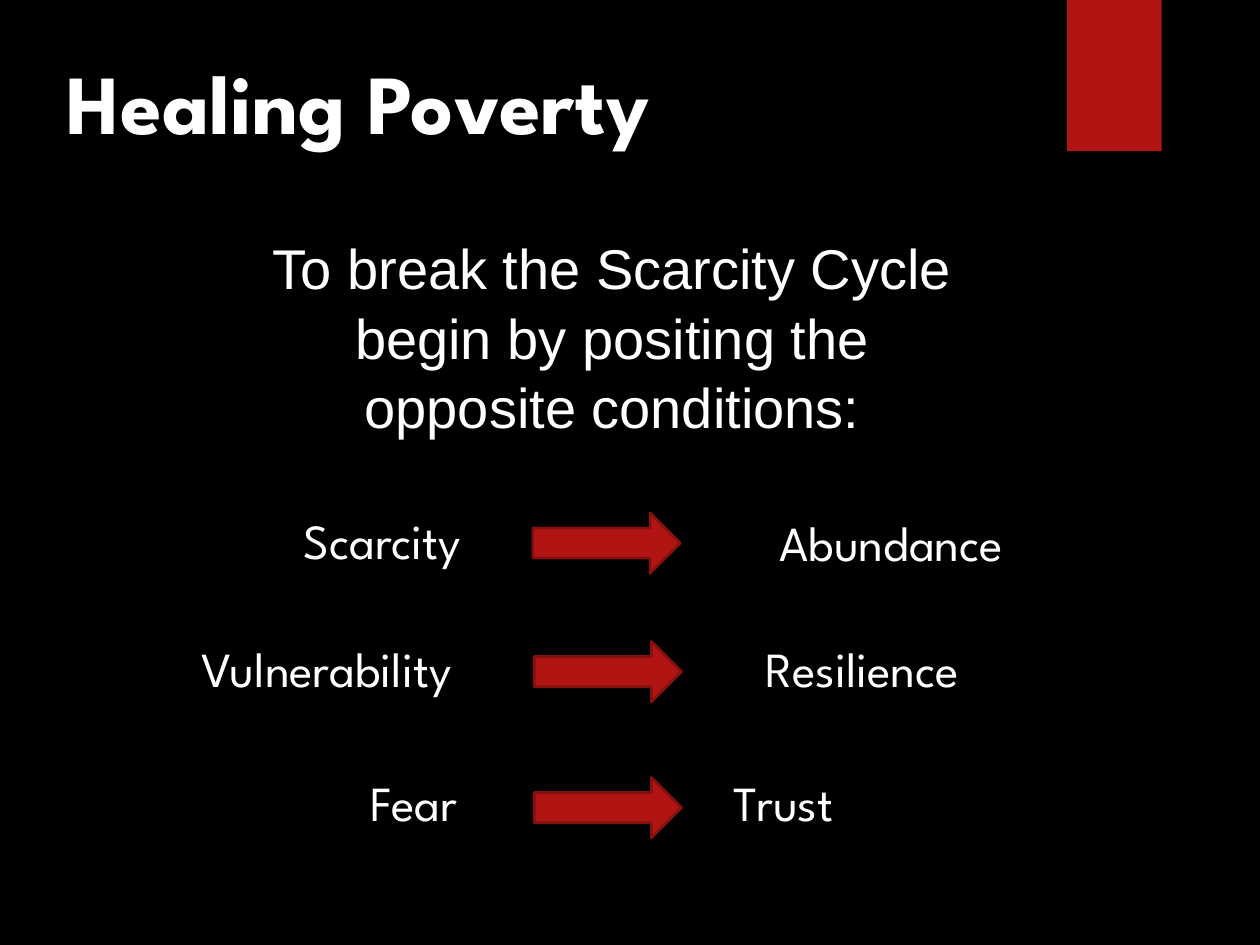
from pptx import Presentation
from pptx.dml.color import RGBColor
from pptx.enum.shapes import MSO_SHAPE
from pptx.enum.text import MSO_ANCHOR, PP_ALIGN
from pptx.util import Inches, Pt

RECTANGLE, RIGHT_ARROW = MSO_SHAPE.RECTANGLE, MSO_SHAPE.RIGHT_ARROW
LEFT, CENTER, RIGHT = PP_ALIGN.LEFT, PP_ALIGN.CENTER, PP_ALIGN.RIGHT
TOP = MSO_ANCHOR.TOP

BLACK = RGBColor(0x00, 0x00, 0x00)
WHITE = RGBColor(0xFF, 0xFF, 0xFF)
RED = RGBColor(0xB0, 0x15, 0x13)
DARK_RED = RGBColor(0x82, 0x10, 0x0E)

DISPLAY_FONT, BODY_FONT = "League Spartan", "Arial"
LABEL_HEIGHT = 0.57
ARROW_WIDTH, ARROW_HEIGHT = 1.17, 0.48

# Each condition: word, left, width, drop below the row top.
CONDITION_ROWS = [
    (4.00, ("Scarcity", 2.31, 2.00, 0), (4.23, 0.07), ("Abundance", 5.29, 2.77, 0.02)),
    (5.02, ("Vulnerability", 1.50, 2.73, 0), (4.24, 0.07), ("Resilience", 5.29, 2.42, 0)),
    (6.08, ("Fear", 2.84, 1.17, 0), (4.24, 0.09), ("Trust", 5.54, 1.17, 0)),
]


def write(holder, text, size, font, align, bold=False):
    frame = holder.text_frame
    frame.word_wrap = True
    frame.vertical_anchor = TOP
    frame.text = text
    paragraph = frame.paragraphs[0]
    paragraph.alignment = align
    style = paragraph.runs[0].font
    style.size, style.name, style.bold = Pt(size), font, bold
    style.color.rgb = WHITE
    return paragraph


def add_words(slide, box, text, size, font, align):
    holder = slide.shapes.add_textbox(*map(Inches, box))
    return write(holder, text, size, font, align)


def add_red_shape(slide, kind, box):
    red_shape = slide.shapes.add_shape(kind, *map(Inches, box))
    red_shape.shadow.inherit = False
    red_shape.fill.solid()
    red_shape.fill.fore_color.rgb = RED
    return red_shape


def add_heading(slide, box):
    title = slide.shapes.title
    title.left, title.top, title.width, title.height = map(Inches, box)
    write(title, "Healing Poverty", 48, DISPLAY_FONT, LEFT, bold=True)


def add_ribbon(slide, box):
    add_red_shape(slide, RECTANGLE, box).line.fill.background()


def add_introduction(slide, box):
    introduction = add_words(
        slide, box,
        "To break the Scarcity Cycle begin by positing the opposite conditions:",
        32, BODY_FONT, CENTER)
    introduction.line_spacing = 1.04
    introduction.space_before = Pt(2)


def add_condition_row(slide, top, scarcity_side, arrow, healing_side):
    for (word, left, width, drop), align in ((scarcity_side, LEFT), (healing_side, RIGHT)):
        add_words(slide, (left, top + drop, width, LABEL_HEIGHT),
                  word, 28, DISPLAY_FONT, align)
    arrow_left, arrow_drop = arrow
    change = add_red_shape(slide, RIGHT_ARROW,
                           (arrow_left, top + arrow_drop, ARROW_WIDTH, ARROW_HEIGHT))
    change.line.color.rgb = DARK_RED
    change.line.width = Pt(1.5)


def main():
    deck = Presentation()
    deck.slide_width, deck.slide_height = Inches(10), Inches(7.5)
    slide = deck.slides.add_slide(deck.slide_layouts[5])
    slide.background.fill.solid()
    slide.background.fill.fore_color.rgb = BLACK
    add_ribbon(slide, (8.47, 0, 0.75, 1.2))
    add_heading(slide, (0.43, 0.35, 8.11, 1.53))
    add_introduction(slide, (1.86, 1.78, 6, 1.93))
    for row in CONDITION_ROWS:
        add_condition_row(slide, *row)
    deck.save("out.pptx")


if __name__ == "__main__":
    main()
